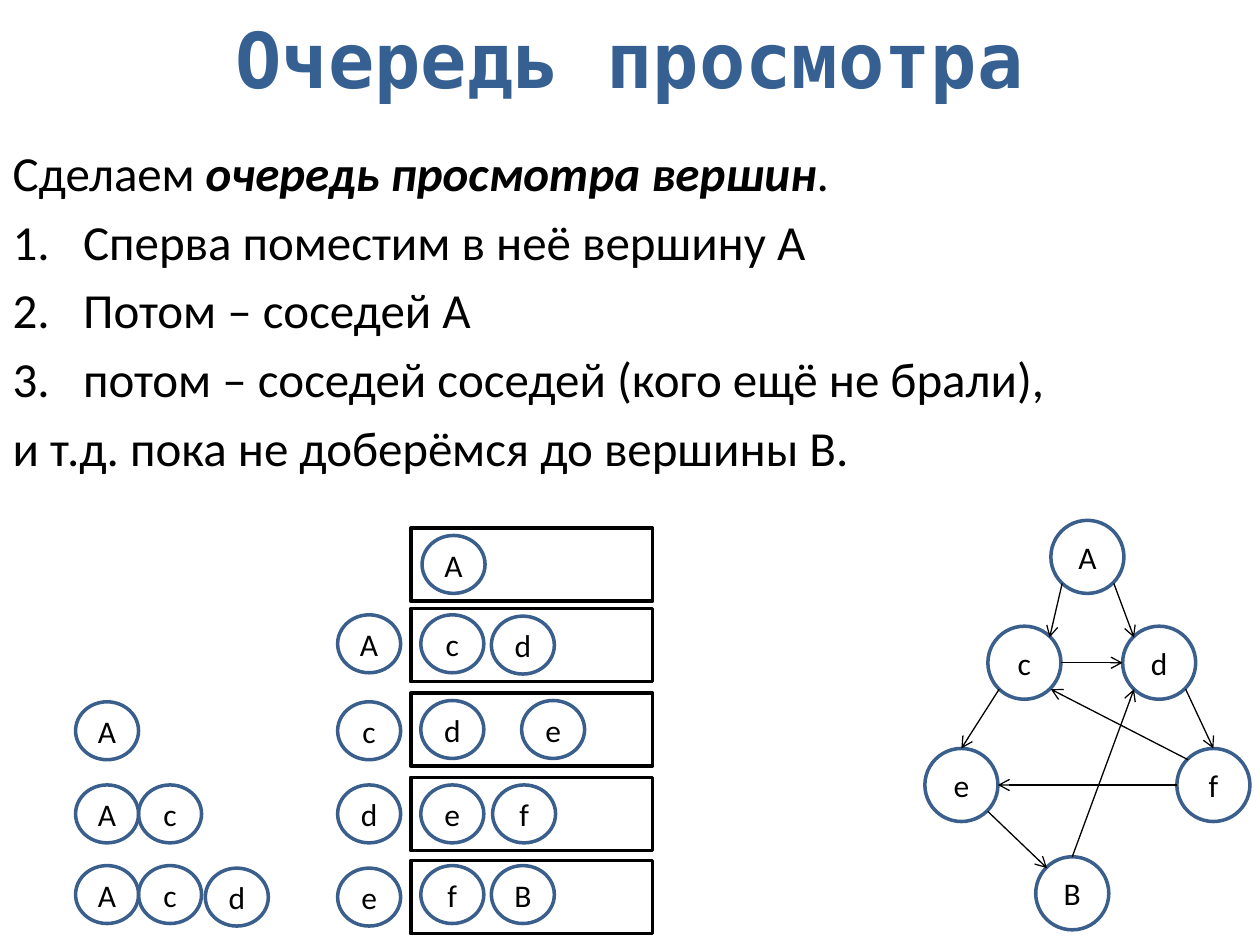
from lxml import etree
from pptx import Presentation
from pptx.dml.color import RGBColor
from pptx.enum.shapes import MSO_CONNECTOR, MSO_SHAPE
from pptx.enum.text import MSO_ANCHOR, MSO_AUTO_SIZE, PP_ALIGN
from pptx.oxml.ns import qn
from pptx.util import Pt

OVAL, RECT = MSO_SHAPE.OVAL, MSO_SHAPE.RECTANGLE
LINE = MSO_CONNECTOR.STRAIGHT
MID, TOP = MSO_ANCHOR.MIDDLE, MSO_ANCHOR.TOP
CENTER, LEFT = PP_ALIGN.CENTER, PP_ALIGN.LEFT
FIXED = MSO_AUTO_SIZE.NONE
PX = 9144  # 100 px to the inch
BLACK, BLUE = "000000", "3A5F8C"
color = RGBColor.from_string

deck = Presentation()
deck.slide_width, deck.slide_height = 1000 * PX, 750 * PX
slide = deck.slides.add_slide(deck.slide_layouts[1])
shapes = slide.shapes


def write(par, text, size, font="Calibri", tone=BLACK, bold=False, slant=False):
    """Add one formatted run to a paragraph."""
    run = par.add_run()
    run.text = text
    run.font.size, run.font.name = Pt(size), font
    run.font.bold, run.font.italic = bold, slant
    run.font.color.rgb = color(tone)


def outline(kind, x, y, w, h, tone, text=""):
    """Draw an unfilled shape with an optional centred label."""
    shape = shapes.add_shape(kind, x * PX, y * PX, w * PX, h * PX)
    shape.shadow.inherit = False
    shape.fill.background()
    shape.line.color.rgb, shape.line.width = color(tone), Pt(2)
    if text:
        frame = shape.text_frame
        frame.margin_left = frame.margin_right = 0
        frame.margin_top = frame.margin_bottom = 0
        frame.vertical_anchor = MID
        par = frame.paragraphs[0]
        par.alignment = CENTER
        write(par, text, 18)


# Title and body text
title = shapes.title
body = slide.placeholders[1]
for box, y, h, anchor in ((title, 0, 92, MID), (body, 108, 288, TOP)):
    box.left, box.top, box.width, box.height = 0, y * PX, 1000 * PX, h * PX
    box.text_frame.auto_size = FIXED
    box.text_frame.vertical_anchor = anchor
head = title.text_frame.paragraphs[0]
head.alignment = CENTER
write(head, "Очередь просмотра", 44, "DejaVu Sans Mono", "376092", True)

# Each line: numbered or not, then runs of text and emphasis
lines = [
    (False, [("Сделаем ", False), ("очередь просмотра вершин", True), (".", False)]),
    (True, [("Сперва поместим в неё вершину А", False)]),
    (True, [("Потом – соседей А", False)]),
    (True, [("потом – соседей соседей (кого ещё не брали),", False)]),
    (False, [("и т.д. пока не доберёмся до вершины B.", False)]),
]
frame = body.text_frame
for i, (listed, runs) in enumerate(lines):
    par = frame.add_paragraph() if i else frame.paragraphs[0]
    par.alignment = LEFT
    props = par._p.get_or_add_pPr()
    indent = 56 * PX if listed else 0
    props.set("marL", str(indent))
    props.set("indent", str(-indent))
    if listed:
        etree.SubElement(props, qn("a:buAutoNum"), type="arabicPeriod")
    else:
        etree.SubElement(props, qn("a:buNone"))
    for text, strong in runs:
        write(par, text, 28, bold=strong, slant=strong)

# Graph
SIZE = 58
nodes = {"A": (834, 413), "c": (784, 497), "d": (891, 497),
         "e": (734, 594), "B": (822, 680), "f": (934, 594)}
for name, (x, y) in nodes.items():
    outline(OVAL, x, y, SIZE, SIZE, BLUE, name)

# Points on a node's rim, by compass direction
rim = {"n": (29, 0), "e": (58, 29), "w": (0, 29), "nw": (9, 9),
       "ne": (49, 9), "sw": (9, 50), "se": (50, 50)}
edges = [("A", "sw", "c", "ne"), ("A", "se", "d", "nw"), ("c", "e", "d", "w"),
         ("c", "sw", "e", "n"), ("B", "n", "d", "sw"), ("d", "se", "f", "n"),
         ("e", "se", "B", "nw"), ("f", "w", "e", "e"), ("f", "nw", "c", "se")]
for start, out, end, into in edges:
    ends = [(nodes[node][axis] + rim[side][axis]) * PX
            for node, side in ((start, out), (end, into)) for axis in (0, 1)]
    edge = shapes.add_connector(LINE, *ends)
    edge.line.color.rgb, edge.line.width = color(BLACK), Pt(0.75)
    etree.SubElement(edge.line._get_or_add_ln(), qn("a:tailEnd"), type="arrow")
    etree.SubElement(edge._element.spPr, qn("a:effectLst"))

# Queue states, one row each: visited, current, waiting
for y in (419, 483, 550, 617, 683):
    outline(RECT, 326, y, 192, SIZE, BLACK)
chips = [
    ("A", 335, 425),
    ("A", 268, 488), ("c", 334, 488), ("d", 390, 489),
    ("A", 60, 557), ("c", 268, 557), ("d", 334, 556), ("e", 414, 556),
    ("A", 60, 623), ("c", 110, 623), ("d", 268, 623), ("e", 334, 623), ("f", 391, 623),
    ("A", 60, 687), ("c", 110, 687), ("d", 163, 689), ("e", 268, 689),
    ("f", 334, 687), ("B", 390, 687),
]
for name, x, y in chips:
    outline(OVAL, x, y, 50, 46, BLUE, name)

deck.save("out.pptx")
